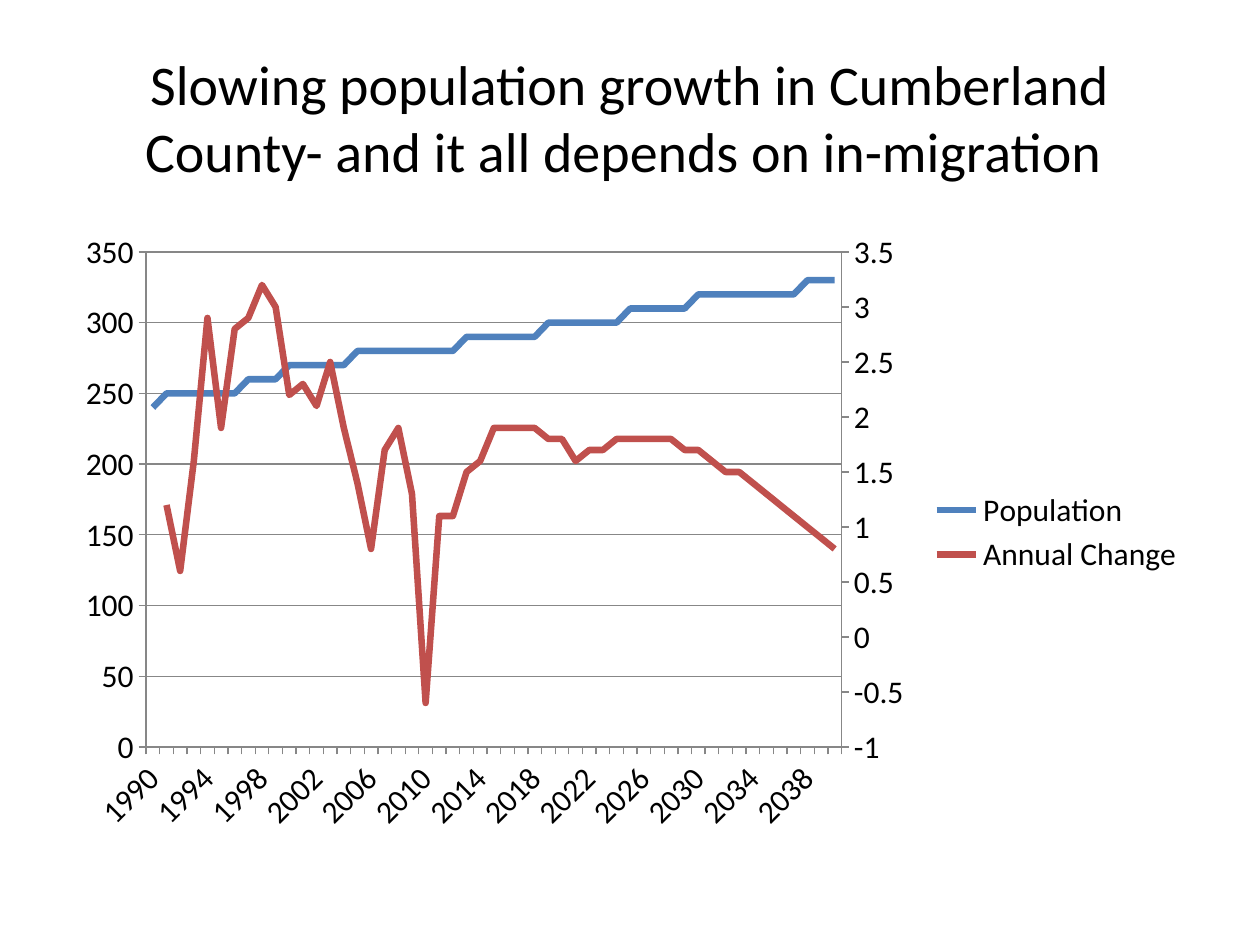
from copy import deepcopy
from dataclasses import dataclass

from lxml import etree
from pptx import Presentation
from pptx import util as u
from pptx.chart.data import CategoryChartData
from pptx.dml.color import RGBColor
from pptx.enum import chart as ch
from pptx.enum import text as t
from pptx.oxml.ns import qn

FONT = "Calibri"
BLACK = "000000"
GREY = "878787"
WIDTH, HEIGHT = u.Inches(10), u.Inches(7.5)
YEARS = range(1990, 2041)


@dataclass
class Measure:
    name: str
    color: str
    low: float
    high: float
    step: float
    values: list


POPULATION = Measure("Population", "4F81BD", 0, 350, 50, [
    240, 250, 250, 250, 250, 250, 250, 260, 260, 260,
    270, 270, 270, 270, 270, 280, 280, 280, 280, 280,
    280, 280, 280, 290, 290, 290, 290, 290, 290, 300,
    300, 300, 300, 300, 300, 310, 310, 310, 310, 310,
    320, 320, 320, 320, 320, 320, 320, 320, 330, 330, 330])
CHANGE = Measure("Annual Change", "C0504D", -1, 3.5, 0.5, [
    None, 1.2, 0.6, 1.6, 2.9, 1.9, 2.8, 2.9, 3.2, 3,
    2.2, 2.3, 2.1, 2.5, 1.9, 1.4, 0.8, 1.7, 1.9, 1.3,
    -0.6, 1.1, 1.1, 1.5, 1.6, 1.9, 1.9, 1.9, 1.9, 1.8,
    1.8, 1.6, 1.7, 1.7, 1.8, 1.8, 1.8, 1.8, 1.8, 1.7,
    1.7, 1.6, 1.5, 1.5, 1.4, 1.3, 1.2, 1.1, 1, 0.9, 0.8])


def rgb(value: str) -> RGBColor:
    return RGBColor.from_string(value)


def box(left: float, top: float, width: float, height: float) -> tuple:
    return (int(WIDTH * left), int(HEIGHT * top), int(WIDTH * width), int(HEIGHT * height))


def style_font(font, size: float, color: str = BLACK) -> None:
    font.name, font.size, font.bold = FONT, u.Pt(size), False
    font.color.rgb = rgb(color)


def write(shape, words: str, *, size: float, color: str = BLACK,
          align=t.PP_ALIGN.CENTER, anchor=t.MSO_ANCHOR.MIDDLE) -> None:
    frame = shape.text_frame
    frame.text, frame.word_wrap, frame.vertical_anchor = words, True, anchor
    frame.paragraphs[0].alignment = align
    style_font(frame.paragraphs[0].runs[0].font, size, color)


def style_line(line, color: str, width: float) -> None:
    line.color.rgb, line.width = rgb(color), u.Pt(width)


def set_val(parent, tag: str, value) -> None:
    parent.find(qn(tag)).set("val", str(value))


def add_after(element, tag: str, value) -> None:
    added = etree.Element(qn(tag))
    added.set("val", str(value))
    element.addnext(added)


def style_axes(chart, measure: Measure) -> None:
    years, amounts = chart.category_axis, chart.value_axis
    for axis in (years, amounts):
        axis.major_tick_mark = ch.XL_TICK_MARK.OUTSIDE
        axis.minor_tick_mark = ch.XL_TICK_MARK.NONE
        style_font(axis.tick_labels.font, 18)
        style_line(axis.format.line, GREY, 0.75)
    years.has_major_gridlines = False
    years.tick_label_position = ch.XL_TICK_LABEL_POSITION.LOW
    years._element.find(qn("c:txPr")).find(qn("a:bodyPr")).set("rot", "-2700000")
    add_after(years._element.find(qn("c:lblOffset")), "c:tickLblSkip", 4)
    amounts.minimum_scale, amounts.maximum_scale = measure.low, measure.high
    amounts.major_unit = measure.step
    amounts.has_major_gridlines = True
    style_line(amounts.major_gridlines.format.line, GREY, 0.75)
    amounts.tick_labels.number_format = "General"
    amounts.tick_labels.number_format_is_linked = False


def move_to_right_axis(chart, measure: Measure) -> None:
    plot = chart.plots[0]._element
    years, amounts = chart.category_axis._element, chart.value_axis._element
    right_plot = deepcopy(plot)
    plot.remove(plot.findall(qn("c:ser"))[1])
    right_plot.remove(right_plot.findall(qn("c:ser"))[0])
    plot.addnext(right_plot)

    right_years, right_amounts = deepcopy(years), deepcopy(amounts)
    ids = ("50010", "50020")
    for reference, number in zip(right_plot.findall(qn("c:axId")), ids):
        reference.set("val", number)
    for axis, own, crossed in ((right_years, *ids), (right_amounts, *ids[::-1])):
        set_val(axis, "c:axId", own)
        set_val(axis, "c:crossAx", crossed)
    set_val(right_years, "c:delete", 1)
    set_val(right_amounts, "c:axPos", "r")
    set_val(right_amounts, "c:crosses", "max")
    set_val(right_amounts, "c:majorUnit", measure.step)
    right_amounts.remove(right_amounts.find(qn("c:majorGridlines")))
    scale = right_amounts.find(qn("c:scaling"))
    set_val(scale, "c:min", measure.low)
    set_val(scale, "c:max", measure.high)
    amounts.addnext(right_amounts)
    right_amounts.addnext(right_years)


def place_plot(chart, **shares: float) -> None:
    area = chart.plots[0]._element.getparent()
    old = area.find(qn("c:layout"))
    if old is not None:
        area.remove(old)
    layout = etree.Element(qn("c:layout"))
    area.insert(0, layout)
    manual = etree.SubElement(layout, qn("c:manualLayout"))
    settings = dict(layoutTarget="inner", xMode="edge", yMode="edge", **shares)
    for key, value in settings.items():
        etree.SubElement(manual, qn(f"c:{key}")).set("val", str(value))


def add_growth_chart(slide, left: Measure, right: Measure) -> None:
    data = CategoryChartData()
    data.categories = [str(year) for year in YEARS]
    for measure in (left, right):
        data.add_series(measure.name, measure.values)
    chart = slide.shapes.add_chart(
        ch.XL_CHART_TYPE.LINE, *box(0.05, 0.7 / 3, 0.9, 0.66), data).chart
    chart.has_title = False
    style_font(chart.font, 18)
    chart.has_legend = True
    chart.legend.position = ch.XL_LEGEND_POSITION.RIGHT
    chart.legend.include_in_layout = False
    style_font(chart.legend.font, 18)
    chart.plots[0].vary_by_categories = False
    for series, measure in zip(chart.plots[0].series, (left, right)):
        series.smooth = False
        series.marker.style = ch.XL_MARKER_STYLE.NONE
        style_line(series.format.line, measure.color, 3.75)
    style_axes(chart, left)
    move_to_right_axis(chart, right)
    place_plot(chart, x=0.66 / 9, y=0.25 / 4.95, w=5.52 / 9, h=3.93 / 4.95)


def main() -> None:
    deck = Presentation()
    deck.slide_width, deck.slide_height = WIDTH, HEIGHT
    slide = deck.slides.add_slide(deck.slide_layouts[5])
    title = slide.shapes.title
    title.left, title.top, title.width, title.height = box(0.05, 0.04, 0.9, 1 / 6)
    write(title, "Slowing population growth in Cumberland County- "
                 "and it all depends on in-migration ", size=32)
    add_growth_chart(slide, POPULATION, CHANGE)
    deck.save("out.pptx")


if __name__ == "__main__":
    main()
